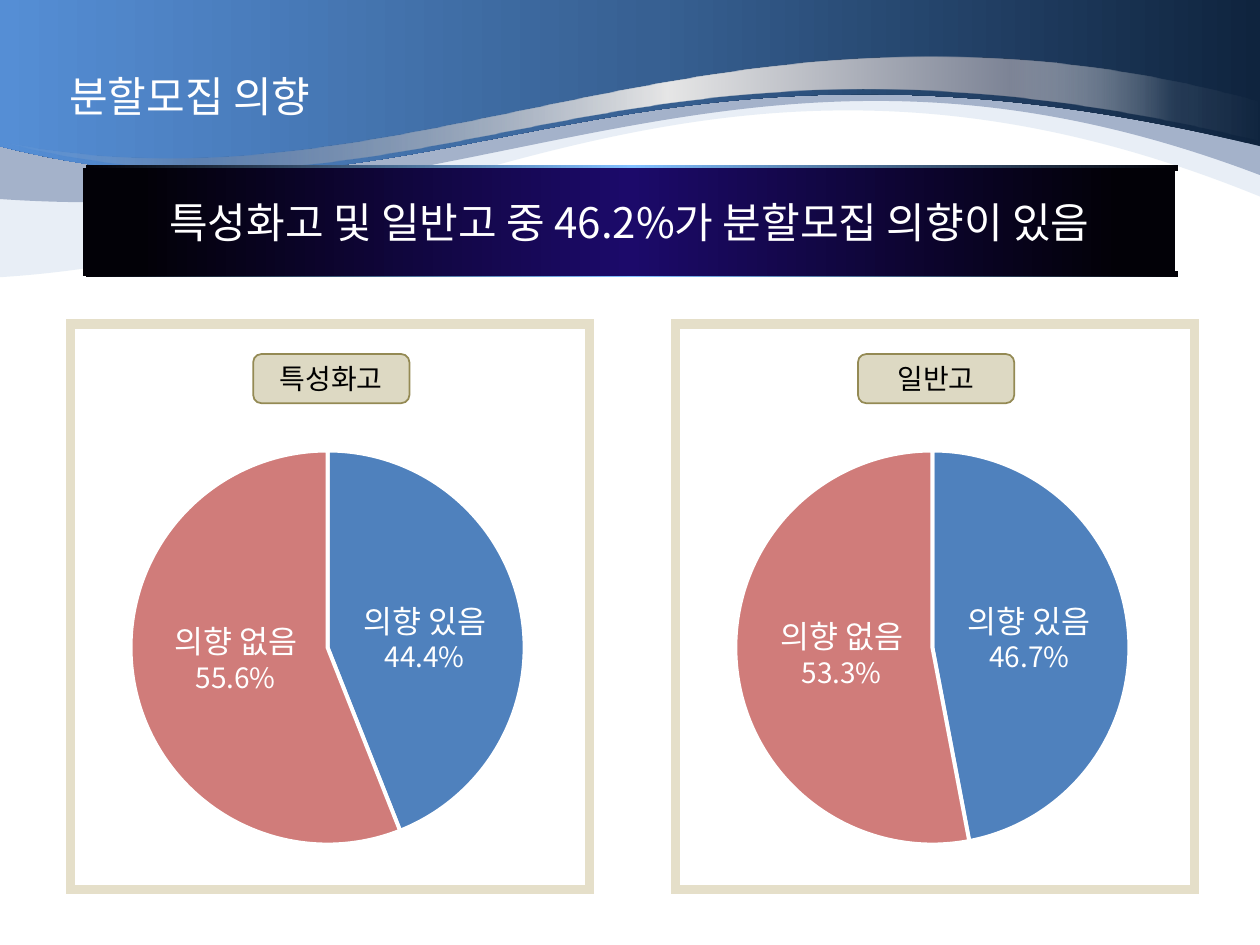
"""Build the slide on split-recruitment intentions with two pie panels."""
import pptx
import pptx.chart.data
import pptx.dml.color
import pptx.enum.chart
import pptx.enum.shapes
import pptx.enum.text
import pptx.oxml
import pptx.oxml.ns
import pptx.util

Inches = pptx.util.Inches
Pt = pptx.util.Pt
qn = pptx.oxml.ns.qn
SHAPE = pptx.enum.shapes.MSO_SHAPE
MIDDLE = pptx.enum.text.MSO_ANCHOR.MIDDLE
CENTER = pptx.enum.text.PP_ALIGN.CENTER
NS_A = pptx.oxml.ns.nsdecls("a")
NS_C = pptx.oxml.ns.nsdecls("c")


class Theme:
    """Colours, gradients and type sizes of the slide."""
    font = "Noto Sans CJK KR"
    title, label, small = Pt(24), Pt(18), Pt(16)
    white, black = "FFFFFF", "000000"
    blue, red, navy = "4F81BD", "D07C7A", "002060"
    frame, badge, badge_line = "E5DFC9", "DDD9C3", "948A54"
    sky = [(0, "0F243E", 100), (48, "376092", 100), (100, "558ED5", 100)]
    silver = [(0, "FFFFFF", 0), (7, "E6E6E6", 8), (20, "7D8496", 100),
              (47, "E6E6E6", 100), (85, "7D8496", 34), (100, "E6E6E6", 0)]
    rule = [(0, "020107", 100), (50, "81BFFF", 100), (100, "020107", 100)]
    banner = [(5, "020107", 100), (50, "1C0A6A", 100), (95, "020107", 100)]


def rgb(value):
    """Return a colour object for a hex string."""
    return pptx.dml.color.RGBColor.from_string(value)


def color_xml(color, alpha):
    """Return a colour element with an opacity in percent."""
    return f'<a:srgbClr val="{color}"><a:alpha val="{alpha * 1000}"/></a:srgbClr>'


def set_fill(sp, fill):
    """Fill with a colour, a (colour, opacity) pair or right-to-left stops."""
    sp.fill.solid()
    if isinstance(fill, str):
        sp.fill.fore_color.rgb = rgb(fill)
        return
    if isinstance(fill, tuple):
        xml = f'<a:solidFill {NS_A}>{color_xml(*fill)}</a:solidFill>'
    else:
        gs = "".join(f'<a:gs pos="{pos * 1000}">{color_xml(color, alpha)}</a:gs>'
                     for pos, color, alpha in fill)
        xml = (f'<a:gradFill {NS_A} rotWithShape="1"><a:gsLst>{gs}</a:gsLst>'
               '<a:lin ang="10800000" scaled="0"/></a:gradFill>')
    solid = sp._element.spPr.find(qn("a:solidFill"))
    solid.getparent().replace(solid, pptx.oxml.parse_xml(xml))


def style_shape(sp, fill, line=None, width=1):
    """Give a shape a fill, an optional mitred line and no shadow."""
    sp.shadow.inherit = False
    set_fill(sp, fill)
    if line:
        sp.line.color.rgb = rgb(line)
        sp.line.width = Pt(width)
        sp._element.spPr.find(qn("a:ln")).append(
            pptx.oxml.parse_xml(f'<a:miter {NS_A} lim="800000"/>'))
    else:
        sp.line.fill.background()


def add_box(s, kind, box, fill, line=None, width=1):
    """Add a styled preset shape in a box given in inches."""
    sp = s.shapes.add_shape(kind, *map(Inches, box))
    style_shape(sp, fill, line, width)
    return sp


def set_text(sp, lines, color, align=None):
    """Write (text, size) lines into a shape."""
    tf = sp.text_frame
    tf.text = "\n".join(text for text, size in lines)
    for p, (text, size) in zip(tf.paragraphs, lines):
        p.alignment = align
        for r in p.runs:
            r.font.size, r.font.name = size, Theme.font
            r.font.color.rgb = rgb(color)
            r.font._element.find(qn("a:latin")).addnext(
                pptx.oxml.parse_xml(f'<a:ea {NS_A} typeface="{Theme.font}"/>'))


def add_text(s, box, lines, align=None):
    """Add an unwrapped white text box that grows with its text."""
    sp = s.shapes.add_textbox(*map(Inches, box))
    set_text(sp, lines, Theme.white, align)
    sp.text_frame.word_wrap = False
    sp.text_frame.auto_size = pptx.enum.text.MSO_AUTO_SIZE.SHAPE_TO_FIT_TEXT


def add_wave(s, points, curves, fill):
    """Add a closed outline whose first points are joined by cubic curves."""
    emu = [(Inches(x), Inches(y)) for x, y in points]
    builder = s.shapes.build_freeform(*emu[0])
    builder.add_line_segments(emu[1:], close=True)
    sp = builder.convert_to_shape()
    segments = list(sp._element.iter(qn("a:lnTo")))
    for i in range(0, 3 * curves, 3):
        bezier = pptx.oxml.parse_xml(f'<a:cubicBezTo {NS_A}/>')
        segments[i].addprevious(bezier)
        for segment in segments[i:i + 3]:
            bezier.append(segment[0])
            segment.getparent().remove(segment)
    style_shape(sp, fill)


def add_header(s, left, width):
    """Draw the layered waves and the title across the top."""
    right = left + width
    bands = [
        (1.56, (5.66, -0.21), (3.33, 1.99), 2.2, 0.4, (Theme.blue, 13)),
        (1.39, (5.95, -0.15), (3.91, 1.85), 1.58, 0.24, (Theme.navy, 29)),
        (1.16, (4.85, -0.11), (3.47, 2.04), 1.16, -0.01, Theme.sky),
    ]
    for y_right, c1, c2, y_left, top, fill in bands:
        add_wave(s, [(right, y_right), c1, c2, (left, y_left), (left, top), (right, top)],
                 1, fill)
    add_wave(s, [(right, 1.12), (4.85, -0.14), (3.47, 2), (left, 1.12),
                 (3.32, 1.79), (5.69, -0.36), (right, 0.81)], 2, Theme.silver)
    add_text(s, (left + 0.45, 0.51, 2.18, 0.5), [("분할모집 의향", Theme.title)])


def add_banner(s, left, top, width, height):
    """Draw the key message between two glowing rules."""
    for y in (top + height - 0.04, top - 0.02):
        add_box(s, SHAPE.RECTANGLE, (left + 0.02, y, width, 0.05), Theme.rule)
    sp = add_box(s, SHAPE.RECTANGLE, (left, top, width, height), Theme.banner)
    set_text(sp, [("특성화고 및 일반고 중 46.2%가 분할모집 의향이 있음", Theme.title)],
             Theme.white, CENTER)
    sp.text_frame.vertical_anchor = MIDDLE


def add_pie(s, box, values):
    """Add a two-slice pie centred in its box."""
    data = pptx.chart.data.CategoryChartData()
    data.categories = ["1", "2"]
    data.add_series("Series 1", values)
    chart = s.shapes.add_chart(
        pptx.enum.chart.XL_CHART_TYPE.PIE, *map(Inches, box), data).chart
    chart.has_legend = chart.has_title = False
    chart.font.size, chart.font.name = Theme.label, Theme.font
    chart.font.color.rgb = rgb(Theme.black)
    plot = chart.plots[0]
    plot.vary_by_categories = False
    for i, color in enumerate((Theme.blue, Theme.red)):
        fmt = plot.series[0].points[i].format
        fmt.fill.solid()
        fmt.fill.fore_color.rgb = rgb(color)
        fmt.line.color.rgb = rgb(Theme.white)
        fmt.line.width = Pt(2.25)
    w, h = 3.13 / box[2], 3.13 / box[3]
    places = (("x", (1 - w) / 2), ("y", (1 - h) / 2), ("w", w), ("h", h))
    inner = "".join(f'<c:{tag} val="{value:.2f}"/>' for tag, value in places)
    area = chart._chartSpace.chart.plotArea
    for old in area.findall(qn("c:layout")):
        area.remove(old)
    area.insert(0, pptx.oxml.parse_xml(
        f'<c:layout {NS_C}><c:manualLayout><c:layoutTarget val="inner"/>'
        f'<c:xMode val="edge"/><c:yMode val="edge"/>{inner}</c:manualLayout></c:layout>'))


def add_panel(s, left, top, width, height, name, values, labels):
    """Draw a framed panel with a name badge, a pie and its labels."""
    add_box(s, SHAPE.RECTANGLE, (left, top, width, height), Theme.white, Theme.frame, 5.5)
    badge = add_box(s, SHAPE.ROUNDED_RECTANGLE, (left + 1.45, top + 0.24, 1.24, 0.39),
                    Theme.badge, Theme.badge_line)
    set_text(badge, [(name, Theme.small)], Theme.black, CENTER)
    badge.text_frame.vertical_anchor = MIDDLE
    add_pie(s, (left + 0.03, top + 0.87, 4.02, 3.4), values)
    for label, share, dx, dy in labels:
        add_text(s, (left + dx, top + dy, 1.22, 0.67),
                 [(label, Theme.label), (share, Theme.small)], CENTER)


def main():
    """Assemble and save the slide."""
    prs = pptx.Presentation()
    prs.slide_width, prs.slide_height = Inches(10), Inches(7.5)
    s = prs.slides.add_slide(prs.slide_layouts[6])
    add_header(s, 0, 10)
    add_banner(s, 0.66, 1.33, 8.67, 0.86)
    panels = (
        ("특성화고", (44, 56),
         (("의향 있음", "44.4%", 2.2, 2.16), ("의향 없음", "55.6%", 0.7, 2.32))),
        ("일반고", (47, 53),
         (("의향 있음", "46.7%", 2.2, 2.16), ("의향 없음", "53.3%", 0.71, 2.28))),
    )
    for i, panel in enumerate(panels):
        add_panel(s, 0.56 + 4.8 * i, 2.57, 4.12, 4.49, *panel)
    prs.save("out.pptx")


if __name__ == "__main__":
    main()
